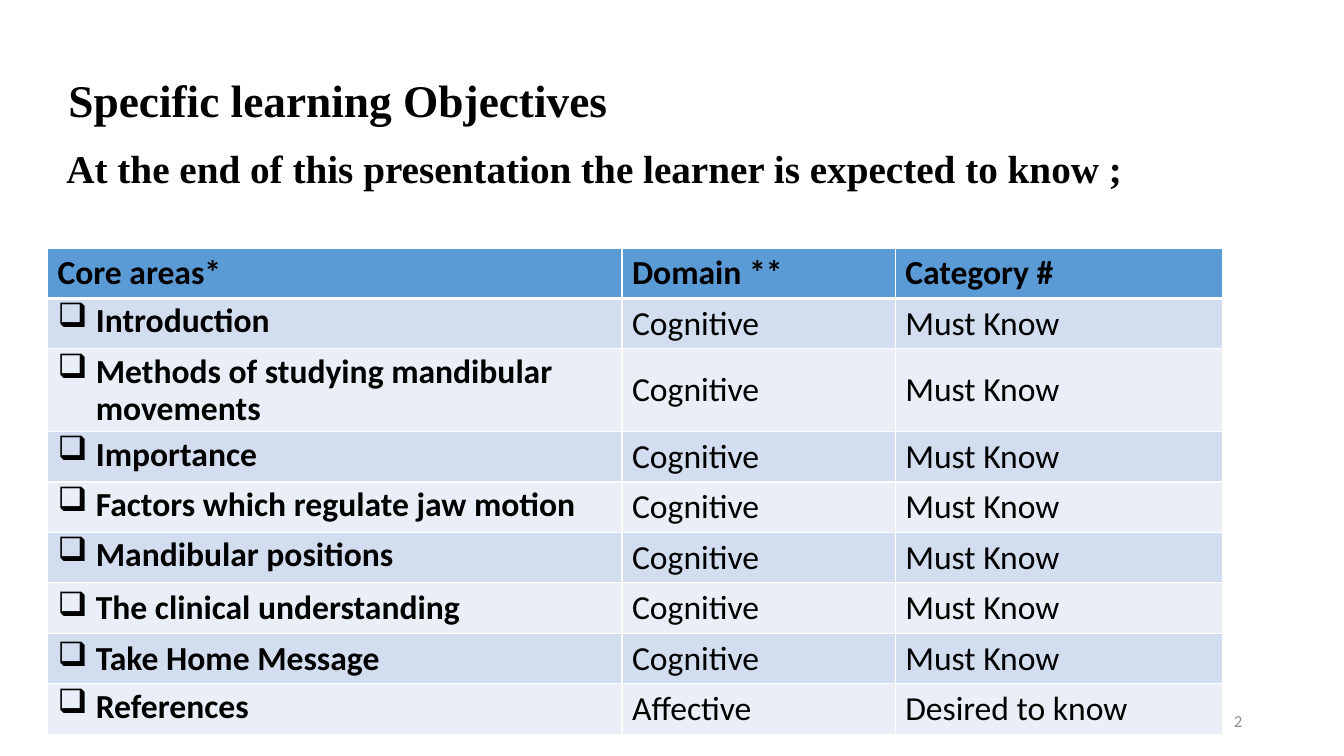
from lxml import etree
from pptx import Presentation
from pptx import util as u
from pptx.dml.color import RGBColor
from pptx.enum import text
from pptx.oxml import ns

BLACK = RGBColor(0x00, 0x00, 0x00)
GREY = RGBColor(0x8C, 0x8C, 0x8C)
WHITE = RGBColor(0xFF, 0xFF, 0xFF)
HEADER_BLUE = RGBColor(0x5B, 0x9B, 0xD5)
BANDS = (RGBColor(0xD2, 0xDE, 0xEF), RGBColor(0xEA, 0xEF, 0xF7))

HEADINGS = ("Core areas*", "Domain **", "Category #")
# core area, domain, category, tight line spacing
OBJECTIVES = (
    ("Introduction", "Cognitive", "Must Know", True),
    ("Methods of studying mandibular movements", "Cognitive", "Must Know", True),
    ("Importance", "Cognitive", "Must Know", True),
    ("Factors which regulate jaw motion", "Cognitive", "Must Know", True),
    ("Mandibular positions", "Cognitive", "Must Know", True),
    ("The clinical understanding", "Cognitive", "Must Know", False),
    ("Take Home Message", "Cognitive", "Must Know", False),
    ("References", "Affective", "Desired to know", True),
)
COLUMN_WIDTHS = (42.75, 20.33, 24.38)
ROW_HEIGHT, TALL_ROW_HEIGHT = 6.53, 10.67
TALL_ROW = 2


class ObjectivesSlide:
    """Draws on one slide; lengths are percentages of its width and height."""

    serif, sans = "Times New Roman", "Calibri"
    body_size = 24
    bullet, bullet_indent = "❑", u.Inches(0.38)

    def __init__(self, prs):
        self.width, self.height = prs.slide_width, prs.slide_height
        self.slide = prs.slides.add_slide(prs.slide_layouts[6])

    def x(self, share):
        return round(self.width * share / 100)

    def y(self, share):
        return round(self.height * share / 100)

    def box(self, left, top, width, height):
        return self.x(left), self.y(top), self.x(width), self.y(height)

    def set_text(self, tf, words, size, font, color=BLACK, bold=False):
        tf.text = words
        p = tf.paragraphs[0]
        for r in p.runs:
            r.font.name, r.font.size = font, u.Pt(size)
            r.font.bold, r.font.color.rgb = bold, color
        return p

    def label(self, box, words, size, font, anchor=text.MSO_ANCHOR.MIDDLE, **style):
        tf = self.slide.shapes.add_textbox(*self.box(*box)).text_frame
        tf.word_wrap, tf.vertical_anchor = True, anchor
        return self.set_text(tf, words, size, font, **style)

    def add_bullet(self, p):
        pPr = p._p.get_or_add_pPr()
        pPr.set("marL", str(self.bullet_indent))
        pPr.set("indent", str(-self.bullet_indent))
        etree.SubElement(pPr, ns.qn("a:buChar")).set("char", self.bullet)

    def add_borders(self, cell, top=1, bottom=1):
        tcPr = cell._tc.get_or_add_tcPr()
        sides = (("L", 1), ("R", 1), ("T", top), ("B", bottom))
        for place, (side, points) in enumerate(sides):
            line = etree.Element(ns.qn(f"a:ln{side}"), w=str(u.Pt(points)))
            fill = etree.SubElement(line, ns.qn("a:solidFill"))
            etree.SubElement(fill, ns.qn("a:srgbClr")).set("val", str(WHITE))
            tcPr.insert(place, line)

    def cell(self, cell, words, fill, bold=False, top=1, bottom=1):
        cell.fill.solid()
        cell.fill.fore_color.rgb = fill
        self.add_borders(cell, top, bottom)
        return self.set_text(cell.text_frame, words, self.body_size, self.sans, bold=bold)

    def table(self, left, top, headings, objectives):
        heights = [ROW_HEIGHT] * (len(objectives) + 1)
        heights[TALL_ROW] = TALL_ROW_HEIGHT
        box = self.box(left, top, sum(COLUMN_WIDTHS), sum(heights))
        table = self.slide.shapes.add_table(len(heights), len(headings), *box).table
        table.first_row = table.horz_banding = False
        for column, width in zip(table.columns, COLUMN_WIDTHS):
            column.width = self.x(width)
        for row, height in zip(table.rows, heights):
            row.height = self.y(height)

        for col, heading in enumerate(headings):
            self.cell(table.cell(0, col), heading, HEADER_BLUE, bold=True, bottom=3)
        for row, (area, domain, category, tight) in enumerate(objectives, 1):
            band = BANDS[(row - 1) % 2]
            rule = 3 if row == 1 else 1
            p = self.cell(table.cell(row, 0), area, band, bold=True, top=rule)
            if tight:
                p.line_spacing, p.space_before = 0.9, u.Pt(10)
            self.add_bullet(p)
            for col, words in enumerate((domain, category), 1):
                cell = table.cell(row, col)
                self.cell(cell, words, band, top=rule)
                cell.vertical_anchor = text.MSO_ANCHOR.MIDDLE


def main():
    prs = Presentation()
    prs.slide_width, prs.slide_height = u.Inches(13.33), u.Inches(7.5)
    s = ObjectivesSlide(prs)
    title = s.label((4.35, 10, 87, 7.2), "Specific learning Objectives",
                    32.4, s.serif, bold=True)
    title.line_spacing = 0.9
    s.table(3.53, 32.8, HEADINGS, OBJECTIVES)
    s.label((4.2, 18.4, 85.8, 7.6),
            "At the end of this presentation the learner is expected to know ;",
            28, s.serif, anchor=text.MSO_ANCHOR.TOP, bold=True)
    number = s.label((70.67, 92.67, 22.5, 5.33), "2", 12, s.sans, color=GREY)
    number.alignment = text.PP_ALIGN.RIGHT
    prs.save("out.pptx")


if __name__ == "__main__":
    main()
